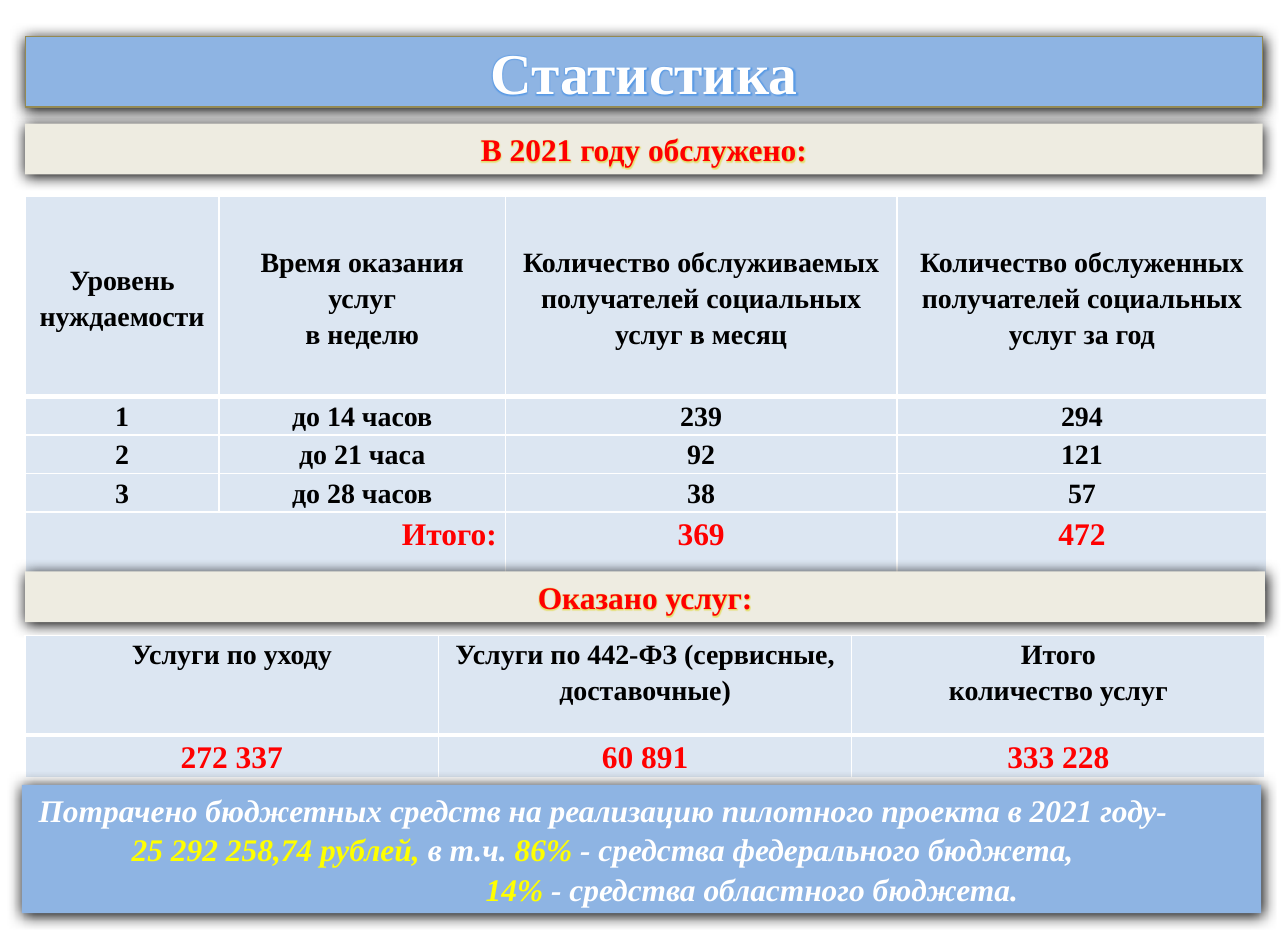
from dataclasses import dataclass

from lxml import etree
from pptx import Presentation
from pptx.dml.color import RGBColor
from pptx.enum.shapes import MSO_SHAPE
from pptx.enum.text import MSO_ANCHOR, MSO_AUTO_SIZE, PP_ALIGN
from pptx.oxml.ns import qn
from pptx.util import Pt

RECTANGLE = MSO_SHAPE.RECTANGLE
TOP, MIDDLE = MSO_ANCHOR.TOP, MSO_ANCHOR.MIDDLE
LEFT, CENTER, RIGHT = PP_ALIGN.LEFT, PP_ALIGN.CENTER, PP_ALIGN.RIGHT
NO_AUTOFIT = MSO_AUTO_SIZE.NONE
TITLE_ONLY = 5


@dataclass(frozen=True)
class Theme:
    font: str = "Times New Roman"
    title_size: float = 33
    accent_size: float = 18
    cell_size: float = 16
    blue: str = "8EB4E3"
    beige: str = "EEECE1"
    cell: str = "DCE6F2"
    outline: str = "948A54"
    white: str = "FFFFFF"
    black: str = "000000"
    red: str = "FF0000"
    yellow: str = "FFFF00"
    title_glow: str = "5A9BE6"
    heading_glow: str = "E6E070"


THEME = Theme()
MARGIN = 14.4

NEEDS_HEADER = [
    "Уровень нуждаемости",
    "Время оказания услуг\nв неделю",
    "Количество обслуживаемых получателей социальных услуг в месяц",
    "Количество обслуженных получателей социальных услуг за год",
]
NEEDS_LEVELS = [
    ["1", "до 14 часов", "239", "294"],
    ["2", "до 21 часа", "92", "121"],
    ["3", "до 28 часов", "38", "57"],
]
NEEDS_TOTAL = ["Итого:", "", "369", "472"]
SERVICES_HEADER = [
    "Услуги по уходу",
    "Услуги по 442-ФЗ (сервисные, доставочные)",
    "Итого\nколичество услуг",
]
SERVICES_COUNTS = ["272 337", "60 891", "333 228"]

# Each budget line: left indent, then pairs of text and colour
BUDGET_LINES = [
    (2.5, [("Потрачено бюджетных средств на реализацию пилотного проекта "
            "в 2021 году-", THEME.white)]),
    (55.8, [("25 292 258,74 рублей,", THEME.yellow), (" в т.ч. ", THEME.white),
            ("86% ", THEME.yellow),
            ("- средства федерального бюджета,", THEME.white)]),
    (258.4, [("14%", THEME.yellow),
             (" - средства областного бюджета.", THEME.white)]),
]


def set_all(target, values):
    for name, value in values.items():
        setattr(target, name, value)


def add_color(parent, color):
    return etree.SubElement(parent, qn("a:srgbClr"), val=color)


def add_run(paragraph, text, size, color, italic=False, glow=None):
    run = paragraph.add_run()
    run.text = text
    set_all(run.font, {"name": THEME.font, "size": Pt(size),
                       "bold": True, "italic": italic})
    run.font.color.rgb = RGBColor.from_string(color)
    if glow:
        effects = etree.Element(qn("a:effectLst"))
        halo = etree.SubElement(effects, qn("a:glow"), rad=str(Pt(2)))
        add_color(halo, glow)
        run.font.fill  # the fill must precede the effects
        run._r.rPr.find(qn("a:latin")).addprevious(effects)


def format_band(band, box, fill, outline=None):
    """Place a filled band with a soft shadow and return its text frame."""
    set_all(band, dict(zip(("left", "top", "width", "height"), map(Pt, box))))
    band.fill.solid()
    band.fill.fore_color.rgb = RGBColor.from_string(fill)
    if outline:
        band.line.color.rgb = RGBColor.from_string(outline)
        band.line.width = Pt(0.75)
    else:
        band.line.fill.background()
    band.shadow.inherit = False
    effects = band._element.spPr.find(qn("a:effectLst"))
    shadow = etree.SubElement(effects, qn("a:outerShdw"), blurRad=str(Pt(8.5)),
                              dist=str(Pt(1)), dir="5400000", rotWithShape="0")
    add_color(shadow, THEME.black)
    set_all(band.text_frame, {
        "auto_size": NO_AUTOFIT, "word_wrap": True, "vertical_anchor": MIDDLE,
        "margin_left": Pt(7.2), "margin_right": Pt(7.2),
        "margin_top": Pt(3.6), "margin_bottom": Pt(3.6)})
    return band.text_frame


def add_title(slide):
    frame = format_band(slide.shapes.title, (MARGIN, 20.9, 708.5, 40.3),
                        THEME.blue, THEME.outline)
    heading = frame.paragraphs[0]
    heading.alignment = CENTER
    add_run(heading, "Статистика", THEME.title_size, THEME.white,
            glow=THEME.title_glow)


def add_band(slide, box, fill):
    band = slide.shapes.add_shape(RECTANGLE, *map(Pt, box))
    return format_band(band, box, fill)


def add_heading(slide, text, top, width):
    frame = add_band(slide, (MARGIN, top, width, 29.1), THEME.beige)
    frame.paragraphs[0].alignment = CENTER
    add_run(frame.paragraphs[0], text, THEME.accent_size, THEME.red,
            glow=THEME.heading_glow)


def add_budget(slide):
    frame = add_band(slide, (12.5, 449.3, 709.5, 73.4), THEME.blue)
    for index, (indent, parts) in enumerate(BUDGET_LINES):
        line = frame.add_paragraph() if index else frame.paragraphs[0]
        set_all(line, {"alignment": LEFT, "space_before": Pt(1 if index else 0)})
        line._p.get_or_add_pPr().set("marL", str(Pt(indent)))
        for text, color in parts:
            add_run(line, text, THEME.accent_size, color, italic=True)


def set_borders(cell, top, bottom):
    properties = cell._tc.get_or_add_tcPr()
    widths = {"L": 1, "R": 1, "T": top, "B": bottom}
    for index, (side, width) in enumerate(widths.items()):
        border = etree.Element(qn(f"a:ln{side}"), w=str(Pt(width)))
        add_color(etree.SubElement(border, qn("a:solidFill")), THEME.white)
        properties.insert(index, border)


def fill_cell(cell, text, size, color, anchor, alignment):
    set_all(cell, {"margin_left": Pt(5), "margin_right": Pt(5), "margin_top": 0,
                   "margin_bottom": 0, "vertical_anchor": anchor})
    cell.fill.solid()
    cell.fill.fore_color.rgb = RGBColor.from_string(THEME.cell)
    if not text:
        return
    for index, part in enumerate(text.split("\n")):
        frame = cell.text_frame
        line = frame.add_paragraph() if index else frame.paragraphs[0]
        set_all(line, {"alignment": alignment, "line_spacing": 1.15})
        add_run(line, part, size, color)


def add_data_table(slide, top, widths, heights, rows, header_anchor):
    """Add a table with a header row on top and a red totals row at the end."""
    frame = slide.shapes.add_table(len(rows), len(widths), Pt(MARGIN), Pt(top),
                                   Pt(sum(widths)), Pt(sum(heights)))
    table = frame.table
    set_all(table, {"first_row": False, "horz_banding": False})
    for column, width in zip(table.columns, widths):
        column.width = Pt(width)
    for row, height in zip(table.rows, heights):
        row.height = Pt(height)
    for r, texts in enumerate(rows):
        is_total = r == len(rows) - 1
        size = THEME.accent_size if is_total else THEME.cell_size
        color = THEME.red if is_total else THEME.black
        for c, text in enumerate(texts):
            cell = table.cell(r, c)
            alignment = RIGHT if text == "Итого:" else CENTER
            fill_cell(cell, text, size, color, TOP if r else header_anchor,
                      alignment)
            set_borders(cell, top=3 if r == 1 else 1, bottom=1 if r else 3)
    return table


def main():
    deck = Presentation()
    deck.slide_width, deck.slide_height = Pt(737.3), Pt(544.3)
    slide = deck.slides.add_slide(deck.slide_layouts[TITLE_ONLY])
    add_title(slide)

    # People served, by level of need
    needs = add_data_table(slide, 112.5, [111, 164, 224, 212],
                           [114.5, 22, 22, 22, 46],
                           [NEEDS_HEADER, *NEEDS_LEVELS, NEEDS_TOTAL], MIDDLE)
    needs.cell(4, 0).merge(needs.cell(4, 1))
    add_heading(slide, "В 2021 году обслужено:", 70.7, 708.5)

    # Services delivered
    add_heading(slide, "Оказано услуг:", 327, 709.9)
    add_data_table(slide, 363.6, [236.6] * 3, [57, 24.8],
                   [SERVICES_HEADER, SERVICES_COUNTS], TOP)

    # Budget spent
    add_budget(slide)
    deck.save("out.pptx")


if __name__ == "__main__":
    main()
